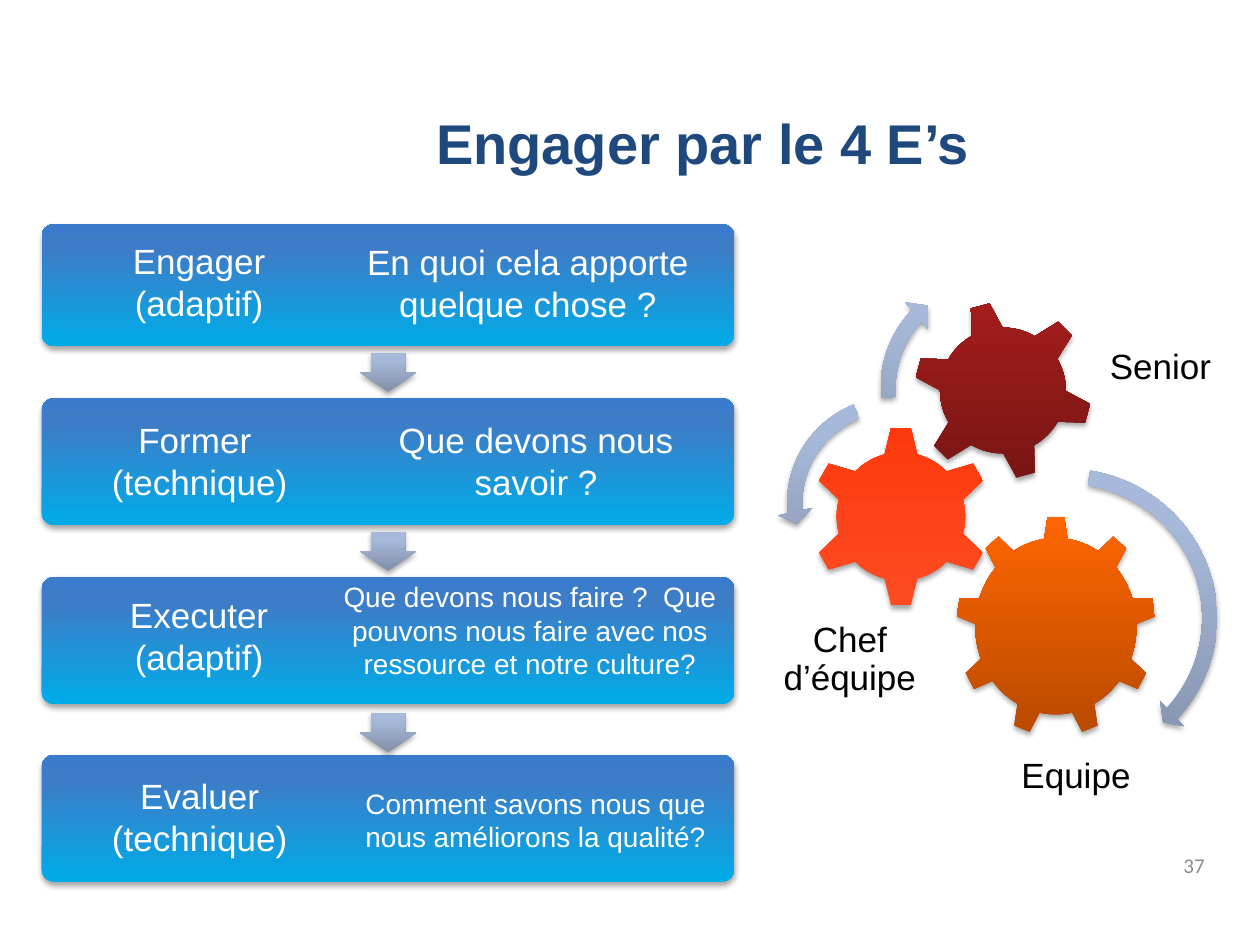
"""Build the slide on engaging a team through the four E's."""
from dataclasses import dataclass
from math import cos, pi, radians, sin

from pptx import Presentation
from pptx.dml.color import RGBColor
from pptx.enum.shapes import MSO_SHAPE
from pptx.enum.text import MSO_ANCHOR, MSO_AUTO_SIZE, PP_ALIGN
from pptx.oxml import parse_xml
from pptx.oxml.ns import nsdecls
from pptx.util import Inches, Pt

COLORS = {"title": "1F497D", "number": "8C8C8C", "white": "FFFFFF", "black": "000000"}
BAR_STOPS = ((0, "00ACE8"), (80, "3D7CC7"), (100, "3A7CCB"))
ARROW_STOPS = ((0, "818FA8"), (80, "A7B9DA"), (100, "A7BADC"))
BAR_LEFT, BAR_WIDTH = 0.33, 5.5
ARROW_LENGTH, ARROW_WIDTH = 0.31, 0.45


@dataclass
class Label:
    text: str
    left: float
    top: float
    width: float
    height: float = 0.77
    size: int = 20


@dataclass
class Step:
    top: float
    height: float
    name: Label
    question: Label


@dataclass
class Gear:
    center: tuple[float, float]
    tip: tuple[float, float]
    root: tuple[float, float]
    teeth: int
    first_angle: float
    tip_half: float
    root_half: float
    stops: tuple


@dataclass
class Turn:
    kind: MSO_SHAPE
    box: tuple[float, float, float, float]
    adjustments: tuple[float, ...]


STEPS = [
    Step(1.78, 0.97, Label("Engager (adaptif)", 0.79, 1.85, 1.58),
         Label("En quoi cela apporte quelque chose ?", 2.73, 1.86, 2.92)),
    Step(3.16, 1.01, Label("Former \n(technique)", 0.75, 3.27, 1.67),
         Label("Que devons nous savoir ?", 2.67, 3.27, 3.17)),
    Step(4.58, 1.01, Label("Executer (adaptif)", 0.79, 4.66, 1.58),
         Label("Que devons nous faire ?  Que pouvons nous faire avec nos ressource et notre culture?",
               2.58, 4.55, 3.25, 0.91, 16)),
    Step(5.99, 1.01, Label("Evaluer (technique)", 0.75, 6.1, 1.67),
         Label("Comment savons nous que nous améliorons la qualité?", 2.75, 6.19, 3, 0.64, 16)),
]
ARROW_TOPS = (2.73, 4.15, 5.59)
GEARS = [
    Gear((8.38, 4.97), (0.79, 0.87), (0.64, 0.7), 9, 90, 4.8, 8.3,
         ((0, "B94A00"), (100, "FF6600"))),
    Gear((7.15, 4.1), (0.71, 0.71), (0.51, 0.51), 6, 90, 6.3, 14.7,
         ((0, "FC4B21"), (100, "FF390E"))),
    Gear((7.96, 3.1), (0.7, 0.7), (0.5, 0.5), 6, 45, 6.3, 14.7,
         ((0, "781614"), (100, "A21D1C"))),
]
TURNS = [
    Turn(MSO_SHAPE.CIRCULAR_ARROW, (7.17, 3.64, 2.57, 2.53), (0.047, 2.99, 25.105, 167.788, 0.055)),
    Turn(MSO_SHAPE.LEFT_CIRCULAR_ARROW, (6.17, 3.07, 1.86, 1.84),
         (0.065, 4.3, 104.891, 148.378, 0.075)),
    Turn(MSO_SHAPE.CIRCULAR_ARROW, (6.91, 2.09, 2.01, 1.98), (0.06, 4.717, 133.138, 105.082, 0.07)),
]
ROLES = [
    Label("Senior", 8.42, 2.72, 1.58, 0.4),
    Label("Equipe", 8, 5.97, 1.08, 0.4),
    Label("Chef d’équipe", 6.08, 4.89, 1.33, 0.71),
]


def style_text(frame, size: int, color: str, align: PP_ALIGN, font: str = "Arial",
               bold: bool = False, spacing: float | None = None) -> None:
    """Format every paragraph and run of a text frame."""
    for paragraph in frame.paragraphs:
        paragraph.alignment = align
        paragraph.line_spacing = spacing
        for run in paragraph.runs:
            run.font.size, run.font.name, run.font.bold = Pt(size), font, bold
            run.font.color.rgb = RGBColor.from_string(COLORS[color])


def add_label(slide, label: Label, color: str, spacing: float | None = None) -> None:
    """Add a centred, wrapping text box."""
    box = slide.shapes.add_textbox(*map(Inches, (label.left, label.top, label.width, label.height)))
    frame = box.text_frame
    frame.word_wrap = True
    frame.auto_size = MSO_AUTO_SIZE.SHAPE_TO_FIT_TEXT
    frame.text = label.text
    style_text(frame, label.size, color, PP_ALIGN.CENTER, spacing=spacing)


def finish(shape, stops: tuple) -> None:
    """Give a shape an upward gradient, no outline and a soft shadow."""
    shape.line.fill.background()
    marks = "".join(f'<a:gs pos="{place * 1000}"><a:srgbClr val="{color}"/></a:gs>'
                    for place, color in stops)
    gradient = parse_xml(f'<a:gradFill {nsdecls("a")} rotWithShape="0"><a:gsLst>{marks}</a:gsLst>'
                         '<a:lin ang="16200000" scaled="0"/></a:gradFill>')
    shadow = parse_xml(f'<a:effectLst {nsdecls("a")}><a:outerShdw blurRad="{Pt(3.1)}" '
                       f'dist="{Pt(1.8)}" dir="5400000" rotWithShape="0"><a:srgbClr val="000000">'
                       '<a:alpha val="35000"/></a:srgbClr></a:outerShdw></a:effectLst>')
    outline = shape.line._get_or_add_ln()
    outline.addprevious(gradient)
    outline.addnext(shadow)


def add_preset(slide, kind: MSO_SHAPE, box: tuple, adjustments: tuple, stops: tuple):
    """Add a finished preset shape."""
    shape = slide.shapes.add_shape(kind, *map(Inches, box))
    for index, value in enumerate(adjustments):
        shape.adjustments[index] = value
    finish(shape, stops)
    return shape


def add_gear(slide, gear: Gear) -> None:
    """Add a gear whose teeth are evenly spread around its centre."""
    def point(radius: tuple[float, float], angle: float) -> tuple[int, int]:
        turn = radians(angle)
        return (Inches(gear.center[0] + radius[0] * cos(turn)),
                Inches(gear.center[1] - radius[1] * sin(turn)))

    pitch = 360 / gear.teeth
    gap = pitch - 2 * gear.root_half
    points = []
    for tooth in range(gear.teeth):
        middle = gear.first_angle + tooth * pitch
        points += [point(gear.root, middle - gear.root_half),
                   point(gear.tip, middle - gear.tip_half),
                   point(gear.tip, middle + gear.tip_half)]
        points += [point(gear.root, middle + gear.root_half + gap * part / 6) for part in range(6)]
    outline = slide.shapes.build_freeform(*points[0])
    outline.add_line_segments(points[1:], close=True)
    finish(outline.convert_to_shape(), gear.stops)


def main() -> None:
    """Draw the slide and save it."""
    deck = Presentation()
    deck.slide_width, deck.slide_height = Inches(10), Inches(7.5)
    slide = deck.slides.add_slide(deck.slide_layouts[5])

    title = slide.shapes.title
    title.left, title.top, title.width, title.height = map(Inches, (0.83, 0.67, 9.5, 0.92))
    title.text_frame.text = "Engager par le 4 E’s"
    title.text_frame.vertical_anchor = MSO_ANCHOR.MIDDLE
    style_text(title.text_frame, 32, "title", PP_ALIGN.CENTER, bold=True)

    number = slide.shapes.add_textbox(*map(Inches, (7.33, 6.67, 2.33, 0.4))).text_frame
    number.word_wrap = True
    number.vertical_anchor = MSO_ANCHOR.MIDDLE
    number.text = "37"
    style_text(number, 12, "number", PP_ALIGN.RIGHT, font="Calibri")

    for step in STEPS:
        add_preset(slide, MSO_SHAPE.ROUNDED_RECTANGLE,
                   (BAR_LEFT, step.top, BAR_WIDTH, step.height), (0.1,), BAR_STOPS)
    for top in ARROW_TOPS:
        arrow = add_preset(slide, MSO_SHAPE.RIGHT_ARROW,
                           (BAR_LEFT + (BAR_WIDTH - ARROW_LENGTH) / 2, top, ARROW_LENGTH, ARROW_WIDTH),
                           (0.6, 0.5), ARROW_STOPS)
        arrow.rotation = 90
    for step in STEPS:
        add_label(slide, step.name, "white")
        add_label(slide, step.question, "white")

    for gear in GEARS:
        add_gear(slide, gear)
    for turn in TURNS:
        add_preset(slide, turn.kind, turn.box, turn.adjustments, ARROW_STOPS)
    for role in ROLES:
        add_label(slide, role, "black", spacing=0.9)

    deck.save("out.pptx")


if __name__ == "__main__":
    main()
